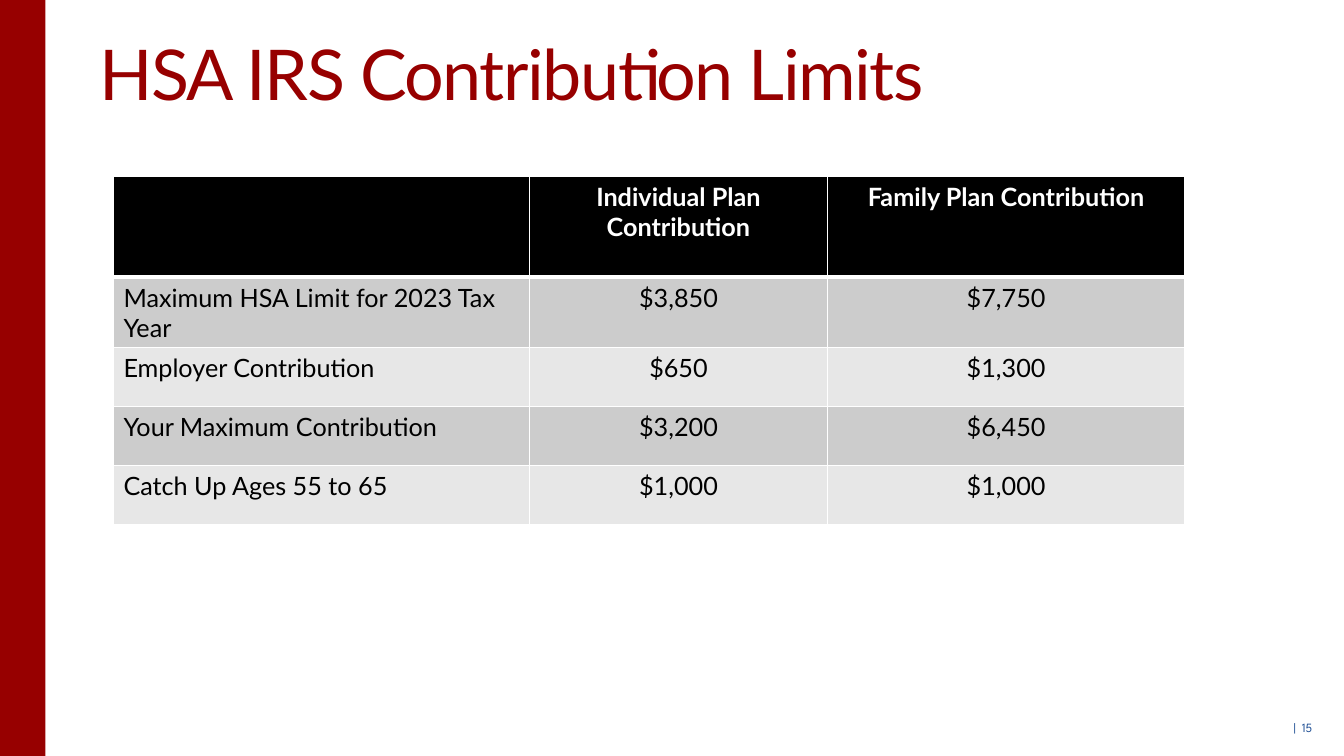
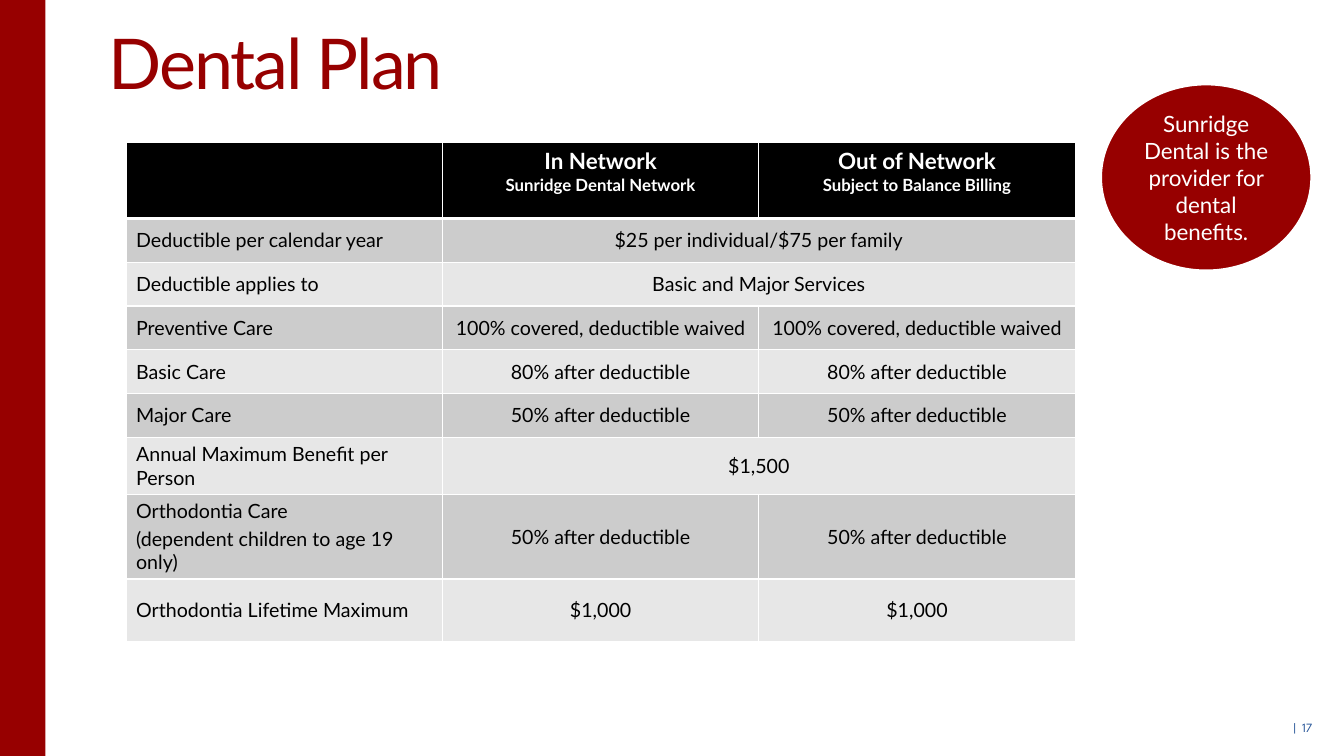
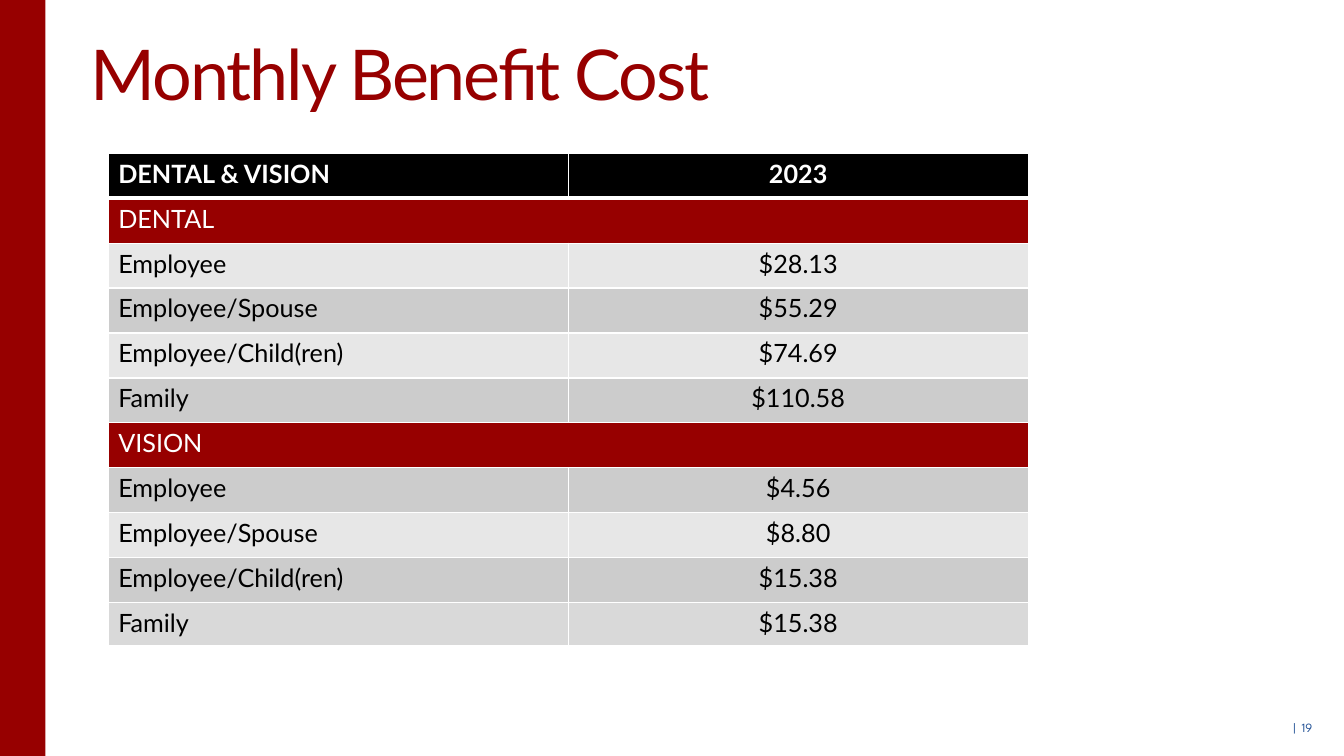
from dataclasses import dataclass
from itertools import cycle

from lxml.etree import SubElement
from pptx import Presentation
from pptx.dml.color import RGBColor
from pptx.enum.shapes import MSO_SHAPE
from pptx.enum.text import MSO_ANCHOR, MSO_AUTO_SIZE, PP_ALIGN
from pptx.oxml.ns import qn
from pptx.util import Inches, Pt


@dataclass(frozen=True)
class Look:
    """Fill, text colour and weight of a table row."""

    fill: str
    ink: str
    bold: bool = False


@dataclass(frozen=True)
class Theme:
    """Colours, fonts and type sizes shared by all slides."""

    red: str = "970000"
    blue: str = "245397"
    white: str = "FFFFFF"
    font: str = "Lato"
    number_font: str = "League Spartan"
    title_size: int = 50
    number_size: int = 9
    callout_size: int = 16
    table_size: int = 18
    small_table_size: int = 14
    rule: int = 1
    head_rule: int = 3
    head: Look = Look("000000", "FFFFFF", True)
    dark: Look = Look("CCCCCC", "000000")
    light: Look = Look("E7E7E7", "000000")
    closing: Look = Look("D9D9D9", "000000")
    section: Look = Look("970000", "FFFFFF")


@dataclass(frozen=True)
class Row:
    """One table row; a cell of None continues the cell to its left."""

    height: float
    look: Look
    cells: tuple
    sizes: tuple = (Theme.table_size,)
    anchor: MSO_ANCHOR = MSO_ANCHOR.TOP


class SlideBuilder:
    """Draws styled elements on a grid of 128 columns by 72 rows."""

    def __init__(self, deck, theme):
        """Keep the deck and its theme."""
        self.deck = deck
        self.theme = theme
        self.page = None

    def grid(self, *cells):
        """Turn grid cells into slide lengths."""
        return [round(cell * self.deck.slide_height / 72) for cell in cells]

    def add_text(self, para, text, size, color, bold=False, font=None, tracking=0):
        """Add one formatted run to a paragraph."""
        span = para.add_run()
        span.text = text
        span.font.name = font or self.theme.font
        span.font.size = Pt(size)
        span.font.bold = bold
        span.font.color.rgb = RGBColor.from_string(color)
        if tracking:
            span._r.get_or_add_rPr().set("spc", str(round(tracking * 100)))

    def start(self, title, left, top, number, tracking):
        """Open a slide with its title, side band and page number."""
        theme = self.theme
        self.page = self.deck.slides.add_slide(self.deck.slide_layouts[5])
        box = self.page.shapes.title
        box.left, box.top, box.width, box.height = self.grid(left, top, 94, 9)
        frame = box.text_frame
        frame.auto_size = MSO_AUTO_SIZE.NONE
        frame.vertical_anchor = MSO_ANCHOR.TOP
        para = frame.paragraphs[0]
        para.alignment = PP_ALIGN.LEFT
        self.add_text(para, title, theme.title_size, theme.red, tracking=tracking)
        self.shape(MSO_SHAPE.RECTANGLE, 0, 0, 4.34, 72)
        footer = self.page.shapes.add_textbox(*self.grid(118.4, 68.1, 7.5, 3.9))
        footer.text_frame.word_wrap = True
        para = footer.text_frame.paragraphs[0]
        para.alignment = PP_ALIGN.RIGHT
        for text, spacing in (("| ", 1), (str(number), 0)):
            self.add_text(para, text, theme.number_size, theme.blue,
                          font=theme.number_font, tracking=spacing)

    def shape(self, kind, *place):
        """Add a plain red shape."""
        shape = self.page.shapes.add_shape(kind, *self.grid(*place))
        shape.shadow.inherit = False
        shape.fill.solid()
        shape.fill.fore_color.rgb = RGBColor.from_string(self.theme.red)
        shape.line.fill.background()
        return shape

    def callout(self, text, *place):
        """Add a red ellipse with centred text."""
        theme = self.theme
        ellipse = self.shape(MSO_SHAPE.OVAL, *place)
        ellipse.line.color.rgb = RGBColor.from_string(theme.white)
        ellipse.line.width = Pt(2)
        frame = ellipse.text_frame
        frame.word_wrap = True
        frame.vertical_anchor = MSO_ANCHOR.MIDDLE
        para = frame.paragraphs[0]
        para.alignment = PP_ALIGN.CENTER
        self.add_text(para, text, theme.callout_size, theme.white)

    def borders(self, cell, top, bottom):
        """Rule a cell on all sides in white."""
        properties = cell._tc.get_or_add_tcPr()
        widths = {"L": self.theme.rule, "R": self.theme.rule, "T": top, "B": bottom}
        for side, width in widths.items():
            line = SubElement(properties, qn(f"a:ln{side}"), w=str(int(Pt(width))))
            fill = SubElement(line, qn("a:solidFill"))
            SubElement(fill, qn("a:srgbClr"), val=self.theme.white)

    def table(self, left, top, columns, rows):
        """Add a table; the first column is left aligned."""
        theme = self.theme
        height = sum(row.height for row in rows)
        place = self.grid(left, top, sum(columns), height)
        table = self.page.shapes.add_table(len(rows), len(columns), *place).table
        for column, width in zip(table.columns, self.grid(*columns)):
            column.width = width
        above = theme.rule
        for index, row in enumerate(rows):
            table.rows[index].height = self.grid(row.height)[0]
            below = theme.head_rule if row.look.bold else theme.rule
            for position, text in enumerate(row.cells):
                cell = table.cell(index, position)
                self.borders(cell, above, below)
                cell.fill.solid()
                cell.fill.fore_color.rgb = RGBColor.from_string(row.look.fill)
                if text is None:
                    table.cell(index, position - 1).merge(cell)
                elif text:
                    self.fill_cell(cell, text, row, position)
            above = below

    def fill_cell(self, cell, text, row, position):
        """Set the lines of one cell as paragraphs."""
        cell.vertical_anchor = row.anchor
        frame = cell.text_frame
        for number, line in enumerate(text.split("\n")):
            para = frame.add_paragraph() if number else frame.paragraphs[0]
            if number and not row.look.bold:
                para.space_before = Pt(2.8)
            para.alignment = PP_ALIGN.CENTER if position else PP_ALIGN.LEFT
            size = row.sizes[min(number, len(row.sizes) - 1)]
            self.add_text(para, line, size, row.look.ink, row.look.bold)


def contribution_slide(builder):
    """Build the contribution limits slide."""
    theme = builder.theme
    builder.start("HSA IRS Contribution Limits", 8.5, 2.4, 15, -1.1)
    limits = (
        ("Maximum HSA Limit for 2023 Tax Year", "$3,850", "$7,750"),
        ("Employer Contribution", "$650", "$1,300"),
        ("Your Maximum Contribution", "$3,200", "$6,450"),
        ("Catch Up Ages 55 to 65", "$1,000", "$1,000"),
    )
    head = Row(9.6, theme.head, ("", "Individual Plan Contribution", "Family Plan Contribution"))
    looks = cycle((theme.dark, theme.light))
    body = [Row(5.6, look, cells) for look, cells in zip(looks, limits)]
    builder.table(10.8, 16.8, (39.6, 28.4, 34), [head, *body])


def dental_slide(builder):
    """Build the dental plan slide."""
    theme = builder.theme
    builder.start("Dental Plan", 9.4, 1.35, 17, -1.5)
    waived = "100% covered, deductible waived"
    half = "50% after deductible"
    most = "80% after deductible"
    benefits = (
        (4.17, ("Deductible per calendar year", "$25 per individual/$75 per family", None)),
        (4.17, ("Deductible applies to", "Basic and Major Services", None)),
        (4.17, ("Preventive Care", waived, waived)),
        (4.17, ("Basic Care", most, most)),
        (4.17, ("Major Care", half, half)),
        (4.17, ("Annual Maximum Benefit per Person", "$1,500", None)),
        (5.7, ("Orthodontia Care\n(dependent children to age 19 only)", half, half)),
        (5.95, ("Orthodontia Lifetime Maximum", "$1,000", "$1,000")),
    )
    head = Row(7.2, theme.head,
               ("", "In Network\nSunridge Dental Network",
                "Out of Network\nSubject to Balance Billing"), (16, 12))
    looks = cycle((theme.dark, theme.light))
    body = [Row(height, look, cells, (theme.small_table_size,), MSO_ANCHOR.MIDDLE)
            for look, (height, cells) in zip(looks, benefits)]
    builder.table(12, 13.6, (30.13,) * 3, [head, *body])
    builder.callout("Sunridge Dental is the provider for dental benefits.",
                    104.8, 8, 20.1, 17.8)


def cost_slide(builder):
    """Build the monthly cost slide."""
    theme = builder.theme
    builder.start("Monthly Benefit Cost", 7.7, 2.4, 19, -1.5)
    members = ("Employee", "Employee/Spouse", "Employee/Child(ren)", "Family")
    dental = ("$28.13", "$55.29", "$74.69", "$110.58")
    vision = ("$4.56", "$8.80", "$15.38")
    columns = (43.8, 43.8)
    height = 4.28
    rows = [Row(height, theme.head, ("DENTAL & VISION", "2023"))]
    sections = (("DENTAL", dental, (theme.light, theme.dark)),
                ("VISION", vision, (theme.dark, theme.light)))
    for name, prices, looks in sections:
        rows.append(Row(height, theme.section, (name, None)))
        rows += [Row(height, look, cells)
                 for look, cells in zip(cycle(looks), zip(members, prices))]
    builder.table(10.3, 14.6, columns, rows)
    builder.table(10.3, 57.4, columns, [Row(4.1, theme.closing, ("Family", "$15.38"))])


def main():
    """Build and save the deck."""
    deck = Presentation()
    deck.slide_width, deck.slide_height = Inches(13.33), Inches(7.5)
    builder = SlideBuilder(deck, Theme())
    for build in (contribution_slide, dental_slide, cost_slide):
        build(builder)
    deck.save("out.pptx")


if __name__ == "__main__":
    main()
